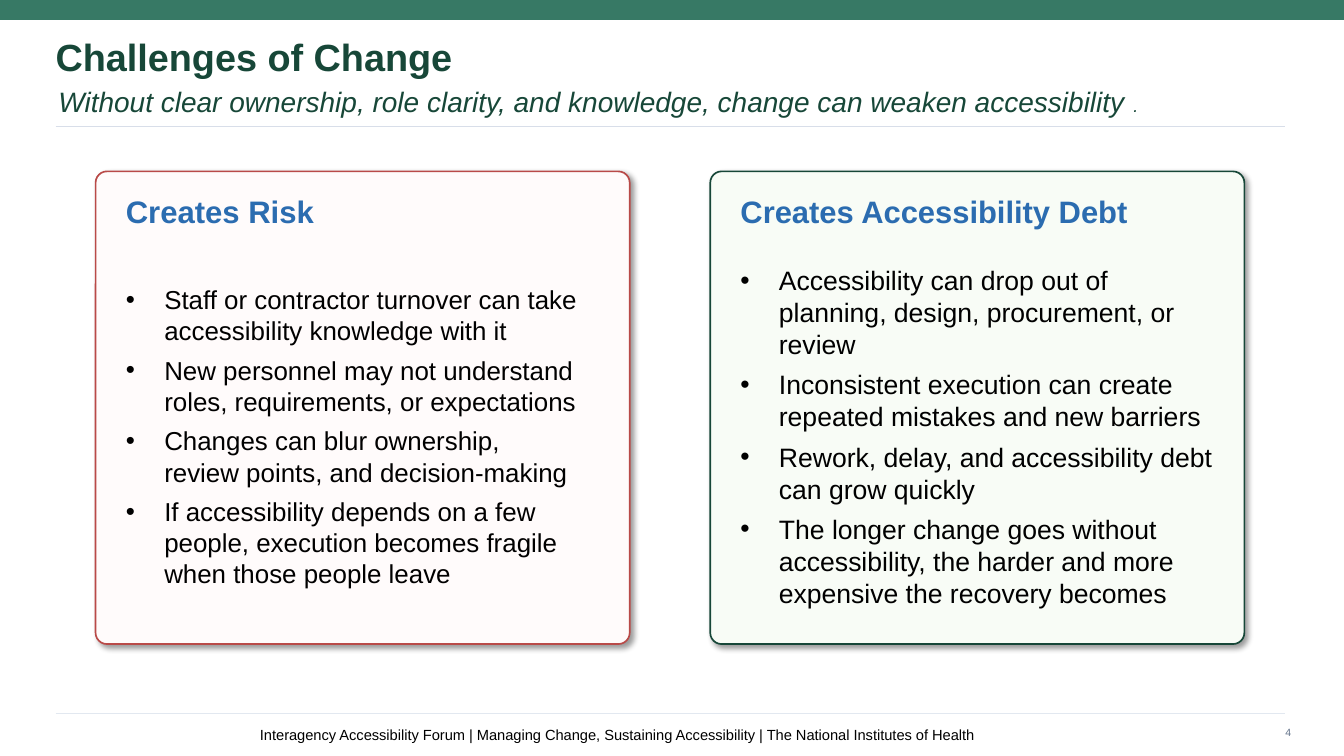
from lxml.etree import SubElement
from pptx import Presentation
from pptx.dml.color import RGBColor
from pptx.enum.shapes import MSO_CONNECTOR, MSO_SHAPE
from pptx.enum.text import MSO_ANCHOR, MSO_AUTO_SIZE, PP_ALIGN
from pptx.oxml import parse_xml
from pptx.oxml.ns import nsdecls, qn
from pptx.util import Cm, Pt

COLORS = {
    "band": "377965",
    "green": "174738",
    "blue": "2B6CB0",
    "black": "000000",
    "gray": "64748B",
    "header_rule": "D8DEE9",
    "footer_rule": "E2E8F0",
    "risk_fill": "FFFBFB",
    "risk_line": "B94A48",
    "debt_fill": "F8FCF6",
}
CARD_LEFT, CARD_PITCH, CARD_PADDING = 2.41, 15.49, 0.76
BULLET_INDENT = Cm(0.97)

CARDS = [
    {
        "heading": "Creates Risk",
        "heading_size": 22.2,
        "fill": "risk_fill",
        "line": "risk_line",
        "list_width": 11.43,
        "list_size": 18.5,
        "points": [
            "Staff or contractor turnover can take accessibility knowledge with it",
            "New personnel may not understand roles, requirements, or expectations",
            "Changes can blur ownership, review points, and decision-making",
            "If accessibility depends on a few people, execution becomes fragile when those people leave",
        ],
    },
    {
        "heading": "Creates Accessibility Debt",
        "heading_size": 22.1,
        "fill": "debt_fill",
        "line": "green",
        "list_width": 11.94,
        "list_size": 19,
        "points": [
            "Accessibility can drop out of planning, design, procurement, or review",
            "Inconsistent execution can create repeated mistakes and new barriers",
            "Rework, delay, and accessibility debt can grow quickly",
            "The longer change goes without accessibility, the harder and more expensive the recovery becomes",
        ],
    },
]


def color(name):
    return RGBColor.from_string(COLORS[name])


def place(shape, left, top, width, height):
    shape.left, shape.top = Cm(left), Cm(top)
    shape.width, shape.height = Cm(width), Cm(height)
    return shape


def add_bullet(paragraph):
    properties = paragraph._p.get_or_add_pPr()
    properties.set("marL", str(BULLET_INDENT))
    properties.set("indent", str(-BULLET_INDENT))
    bullet_color = SubElement(properties, qn("a:buClr"))
    SubElement(bullet_color, qn("a:srgbClr"), val=COLORS["black"])
    SubElement(properties, qn("a:buFont"), typeface="Arial")
    SubElement(properties, qn("a:buChar"), char="•")


def add_run(paragraph, text, size, ink, bold=False, italic=False):
    run = paragraph.add_run()
    run.text = text
    run.font.name = "Arial"
    run.font.size = Pt(size)
    run.font.bold = bold
    run.font.italic = italic
    run.font.color.rgb = color(ink)


def write_text(shape, *lines, align=PP_ALIGN.LEFT, spacing=1.0, after=0, bullets=False, **font):
    frame = shape.text_frame
    frame.word_wrap = True
    frame.auto_size = MSO_AUTO_SIZE.NONE
    frame.vertical_anchor = MSO_ANCHOR.MIDDLE
    frame.margin_left = frame.margin_top = frame.margin_right = frame.margin_bottom = 0
    for index, line in enumerate(lines):
        paragraph = frame.paragraphs[0] if index == 0 else frame.add_paragraph()
        if bullets:
            add_bullet(paragraph)
        paragraph.alignment = align
        paragraph.line_spacing = spacing
        paragraph.space_before = Pt(0)
        paragraph.space_after = Pt(after)
        add_run(paragraph, line, **font)
    return frame


def add_label(slide, text, left, top, width, height, **style):
    label = slide.shapes.add_textbox(Cm(left), Cm(top), Cm(width), Cm(height))
    return write_text(label, text, **style)


def add_panel(slide, preset, left, top, width, height, fill, line, line_width):
    panel = slide.shapes.add_shape(preset, Cm(left), Cm(top), Cm(width), Cm(height))
    panel.shadow.inherit = False
    panel.fill.solid()
    panel.fill.fore_color.rgb = color(fill)
    panel.line.color.rgb = color(line)
    panel.line.width = Pt(line_width)
    return panel


def add_rule(slide, top, ink):
    rule = slide.shapes.add_connector(MSO_CONNECTOR.STRAIGHT, Cm(1.4), Cm(top), Cm(32.39), Cm(top))
    rule.line.color.rgb = color(ink)
    rule.line.width = Pt(1)
    SubElement(rule._element.spPr, qn("a:effectLst"))


def add_drop_shadow(panel):
    effects = panel._element.spPr.find(qn("a:effectLst"))
    effects.append(parse_xml(
        f'<a:outerShdw {nsdecls("a")} blurRad="{Pt(4)}" dist="{Pt(3)}" dir="2700000" '
        f'algn="tl" rotWithShape="0"><a:srgbClr val="{COLORS["black"]}">'
        '<a:alpha val="40000"/></a:srgbClr></a:outerShdw>'
    ))


def add_card(slide, column, card):
    left = CARD_LEFT + column * CARD_PITCH
    panel = add_panel(slide, MSO_SHAPE.ROUNDED_RECTANGLE, left, 4.32, 13.46, 11.91,
                      card["fill"], card["line"], 1.2)
    panel.adjustments[0] = 0.024
    add_drop_shadow(panel)
    slide.shapes._spTree.insert(2, panel._element)

    heading = slide.placeholders[1 + 2 * column]
    place(heading, left + CARD_PADDING, 5.03, 11.94, 0.76)
    write_text(heading, card["heading"], size=card["heading_size"], ink="blue",
               bold=True, spacing=0.8)

    points = slide.placeholders[2 + 2 * column]
    place(points, left + CARD_PADDING, 6.12, card["list_width"], 9.75)
    write_text(points, *card["points"], size=card["list_size"], ink="black",
               after=6, bullets=True)


def main():
    deck = Presentation()
    deck.slide_width, deck.slide_height = Cm(33.87), Cm(19.05)
    slide = deck.slides.add_slide(deck.slide_layouts[4])

    add_panel(slide, MSO_SHAPE.RECTANGLE, 0, 0.03, 33.87, 0.43, "band", "band", 2)
    title = place(slide.shapes.title, 1.4, 0.81, 30.23, 1.22)
    write_text(title, "Challenges of Change", size=27, ink="green", bold=True)
    subtitle = add_label(
        slide,
        "Without clear ownership, role clarity, and knowledge, change can weaken accessibility ",
        1.47, 2.24, 29.21, 0.81, size=20, ink="green", italic=True, spacing=0.8)
    add_run(subtitle.paragraphs[0], ".", size=12.5, ink="green", italic=True)
    add_rule(slide, 3.18, "header_rule")

    for column, card in enumerate(CARDS):
        add_card(slide, column, card)

    add_rule(slide, 17.98, "footer_rule")
    add_label(
        slide,
        "Interagency Accessibility Forum | Managing Change, Sustaining Accessibility | "
        "The National Institutes of Health",
        4.9, 18.26, 21.34, 0.51, size=10.5, ink="black", align=PP_ALIGN.CENTER)
    add_label(slide, "4", 31.65, 18.19, 0.89, 0.51, size=7.5, ink="gray", align=PP_ALIGN.RIGHT)
    deck.save("out.pptx")


if __name__ == "__main__":
    main()
